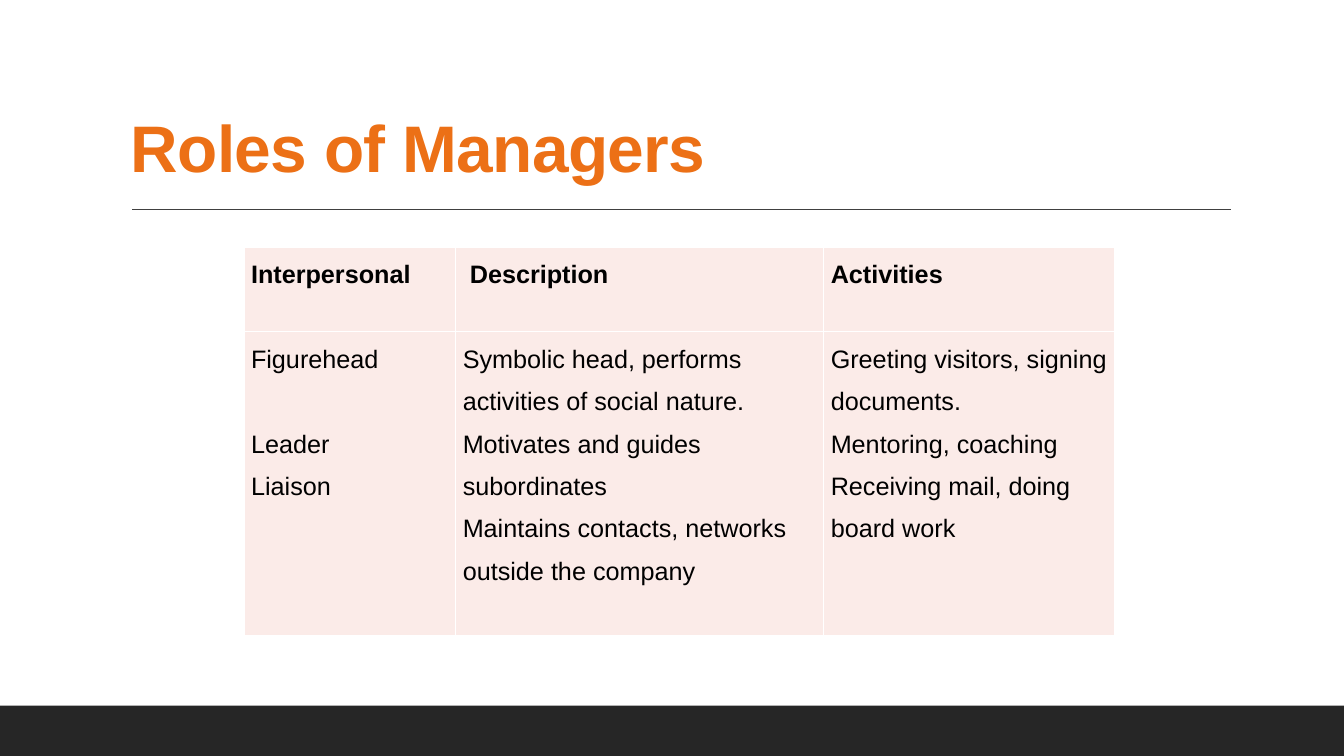
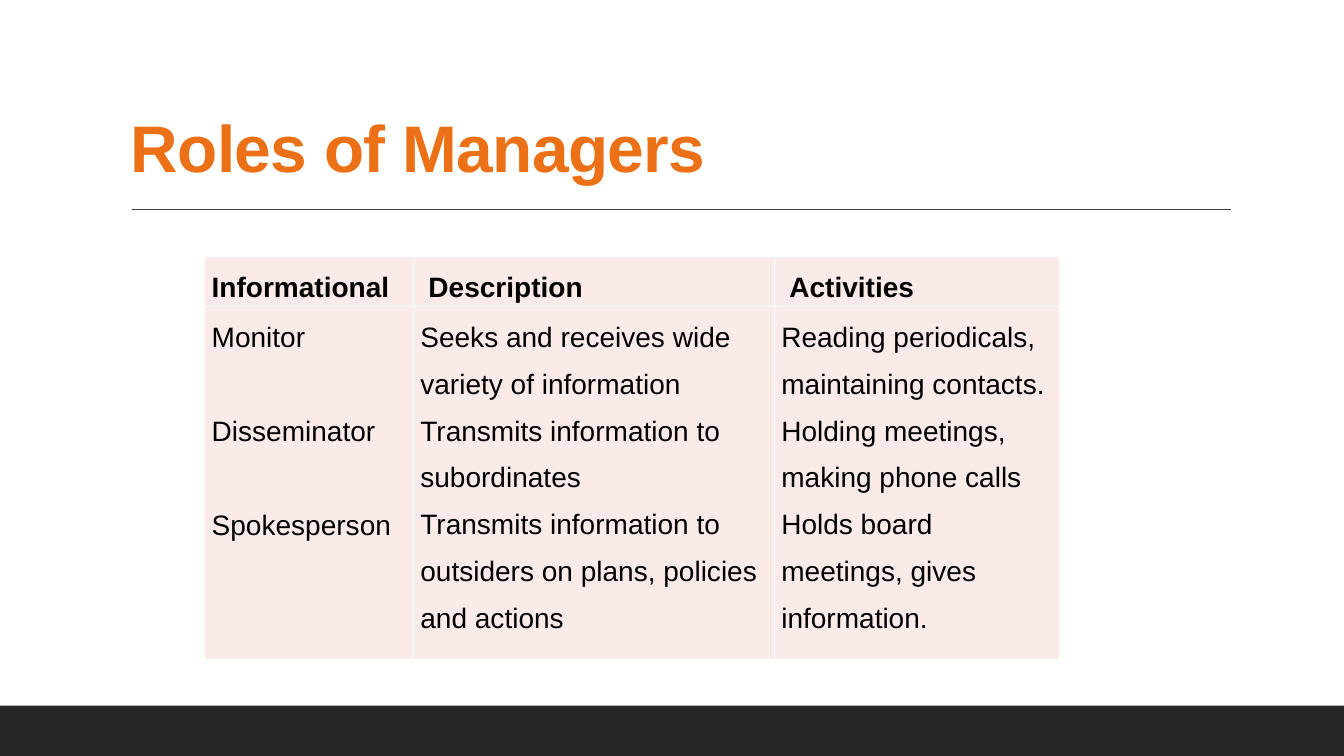
from dataclasses import dataclass

from lxml import etree
from pptx import Presentation
from pptx.dml.color import RGBColor
from pptx.enum.shapes import MSO_CONNECTOR, MSO_SHAPE
from pptx.enum.text import MSO_ANCHOR, PP_ALIGN
from pptx.oxml import parse_xml
from pptx.oxml.ns import nsdecls, qn
from pptx.slide import Slide
from pptx.table import _Cell
from pptx.util import Inches, Pt

RECTANGLE = MSO_SHAPE.RECTANGLE
STRAIGHT = MSO_CONNECTOR.STRAIGHT
BOTTOM = MSO_ANCHOR.BOTTOM
LEFT = PP_ALIGN.LEFT
JUSTIFY = PP_ALIGN.JUSTIFY

ORANGE = RGBColor(0xEC, 0x70, 0x16)
CHARCOAL = RGBColor(0x26, 0x26, 0x26)
GREY = RGBColor(0x40, 0x40, 0x40)
BLUSH = RGBColor(0xFB, 0xEB, 0xE8)
BLACK = RGBColor(0, 0, 0)
BORDER_HEX = "FFFFFF"

FONT = "Arial"
SLIDE_WIDTH, SLIDE_HEIGHT = 13.33, 7.5
BAND_HEIGHT = 0.5
TITLE = "Roles of Managers"
CELL_INSET = 0.07
LINE_SPACING = 1.5
LINE_PITCH = 1.68  # height of a line at LINE_SPACING, per point of text size


@dataclass(frozen=True)
class Entry:
    """One paragraph of a cell, with the number of lines left free above it."""
    text: str
    lines_before: int = 0


@dataclass(frozen=True)
class Heading:
    text: str
    indent: float = 0


@dataclass(frozen=True)
class RoleTable:
    left: float
    top: float
    column_widths: tuple[float, ...]
    row_heights: tuple[float, float]
    text_size: int
    headings: tuple[Heading, ...]
    columns: tuple[tuple[Entry, ...], ...]


ROLE_TABLES = (
    RoleTable(
        2.42, 2.45, (2.1, 3.65, 2.88), (0.84, 3.02), 18,
        (Heading("Interpersonal"), Heading("Description", 0.07), Heading("Activities")),
        (
            (Entry("Figurehead"), Entry("Leader", 1), Entry("Liaison")),
            (
                Entry("Symbolic head, performs activities of social nature."),
                Entry("Motivates and guides subordinates"),
                Entry("Maintains contacts, networks outside the company"),
            ),
            (
                Entry("Greeting visitors, signing documents."),
                Entry("Mentoring, coaching"),
                Entry("Receiving mail, doing board work"),
            ),
        ),
    ),
    RoleTable(
        2.03, 2.54, (2.07, 3.58, 2.83), (0.46, 3.24), 20,
        (Heading("Informational"), Heading("Description", 0.08), Heading("Activities", 0.08)),
        (
            (Entry("Monitor"), Entry("Disseminator", 1), Entry("Spokesperson", 1)),
            (
                Entry("Seeks and receives wide variety of information"),
                Entry("Transmits information to subordinates"),
                Entry("Transmits information to outsiders on plans, policies and actions"),
            ),
            (
                Entry("Reading periodicals, maintaining contacts."),
                Entry("Holding meetings, making phone calls"),
                Entry("Holds board meetings, gives information."),
            ),
        ),
    ),
)


def add_frame(slide: Slide) -> None:
    """Draw the footer band, the title and the rule below it."""
    band = slide.shapes.add_shape(
        RECTANGLE, 0, Inches(SLIDE_HEIGHT - BAND_HEIGHT),
        Inches(SLIDE_WIDTH), Inches(BAND_HEIGHT))
    band.shadow.inherit = False
    band.fill.solid()
    band.fill.fore_color.rgb = CHARCOAL
    band.line.fill.background()

    rule = slide.shapes.add_connector(
        STRAIGHT, Inches(1.31), Inches(2.08), Inches(12.21), Inches(2.08))
    rule.line.color.rgb = GREY
    rule.line.width = Pt(1)
    etree.SubElement(rule._element.spPr, qn("a:effectLst"))

    box = slide.shapes.add_textbox(Inches(1.2), Inches(0.31), Inches(11), Inches(1.59))
    frame = box.text_frame
    frame.word_wrap = True
    frame.vertical_anchor = BOTTOM
    frame.text = TITLE
    para = frame.paragraphs[0]
    para.line_spacing = 0.9
    span = para.runs[0]
    span.font.name = FONT
    span.font.size = Pt(47)
    span.font.bold = True
    span.font.color.rgb = ORANGE
    span._r.get_or_add_rPr().set("spc", "-50")


def style_cell(cell: _Cell, indent: float = 0) -> None:
    cell.margin_left = Inches(CELL_INSET + indent)
    cell.margin_right = Inches(CELL_INSET)
    cell.margin_top = cell.margin_bottom = 0
    properties = cell._tc.get_or_add_tcPr()
    for side in ("lnL", "lnR", "lnT", "lnB"):
        properties.append(parse_xml(
            f'<a:{side} {nsdecls("a")} w="{Pt(1)}"><a:solidFill>'
            f'<a:srgbClr val="{BORDER_HEX}"/></a:solidFill></a:{side}>'))
    cell.fill.solid()
    cell.fill.fore_color.rgb = BLUSH


def write_cell(cell: _Cell, entries: tuple[Entry, ...], size: int,
               bold: bool, alignment: PP_ALIGN) -> None:
    frame = cell.text_frame
    frame.text = "\n".join(entry.text for entry in entries)
    for para, entry in zip(frame.paragraphs, entries):
        para.alignment = alignment
        para.line_spacing = LINE_SPACING
        para.space_before = Pt(round(entry.lines_before * LINE_PITCH * size, 1))
        font = para.runs[0].font
        font.name = FONT
        font.size = Pt(size)
        font.bold = bold
        font.color.rgb = BLACK


def add_role_table(slide: Slide, roles: RoleTable) -> None:
    table = slide.shapes.add_table(
        len(roles.row_heights), len(roles.column_widths),
        Inches(roles.left), Inches(roles.top),
        Inches(sum(roles.column_widths)), Inches(sum(roles.row_heights))).table
    table.first_row = False
    table.horz_banding = False
    for row, height in zip(table.rows, roles.row_heights):
        row.height = Inches(height)
    for index, width in enumerate(roles.column_widths):
        table.columns[index].width = Inches(width)
        heading = roles.headings[index]
        heading_cell, body_cell = table.cell(0, index), table.cell(1, index)
        style_cell(heading_cell, heading.indent)
        write_cell(heading_cell, (Entry(heading.text),), roles.text_size, True, JUSTIFY)
        style_cell(body_cell)
        write_cell(body_cell, roles.columns[index], roles.text_size, False, LEFT)


def main() -> None:
    deck = Presentation()
    deck.slide_width = Inches(SLIDE_WIDTH)
    deck.slide_height = Inches(SLIDE_HEIGHT)
    blank_layout = deck.slide_layouts[6]
    for roles in ROLE_TABLES:
        slide = deck.slides.add_slide(blank_layout)
        add_frame(slide)
        add_role_table(slide, roles)
    deck.save("out.pptx")


if __name__ == "__main__":
    main()
